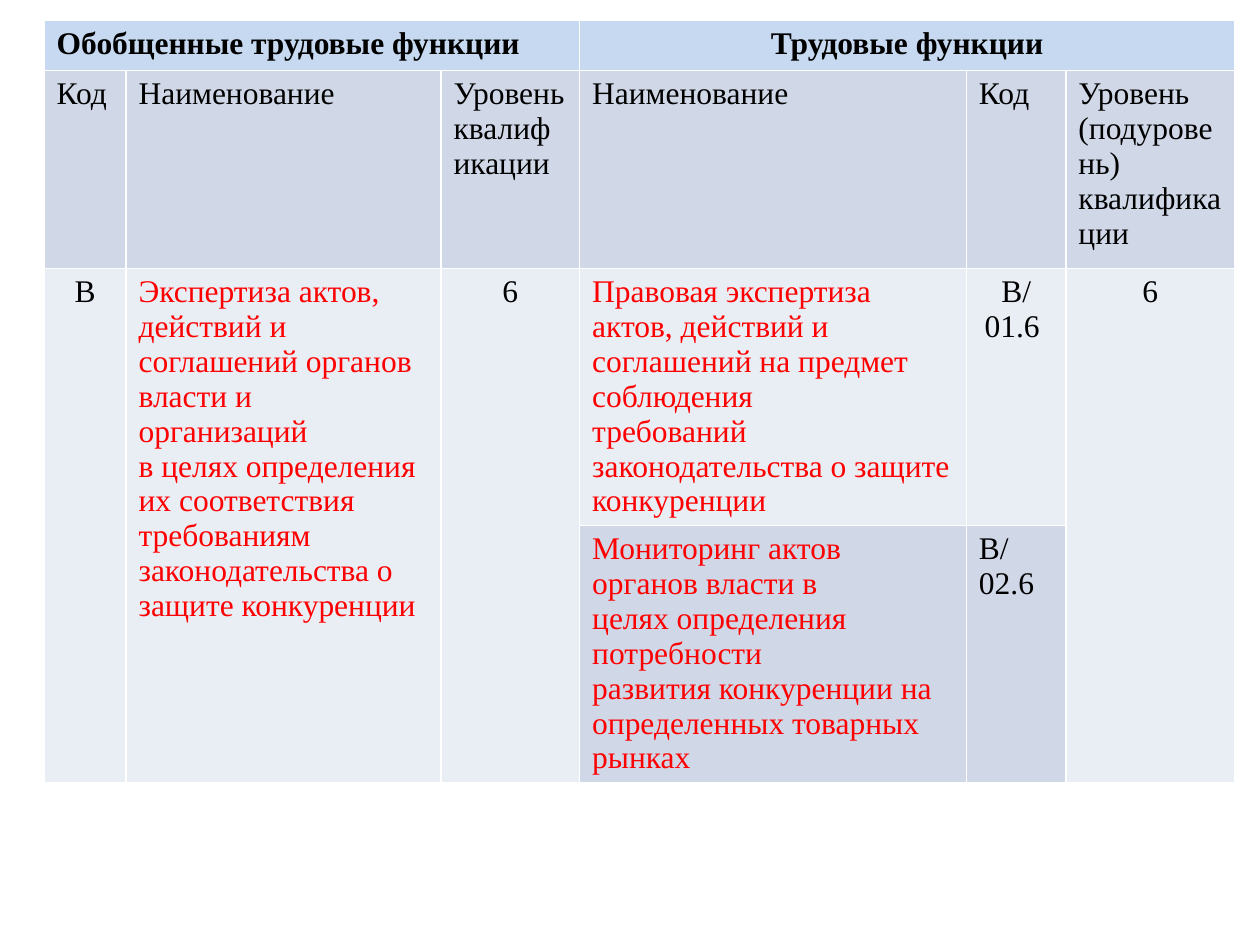
from pptx import Presentation
from pptx.dml.color import RGBColor
from pptx.enum.text import PP_ALIGN as Align
from pptx.util import Inches, Pt


def color(hex_string):
    return RGBColor.from_string(hex_string)


deck = Presentation()
deck.slide_width, deck.slide_height = Inches(10), Inches(7.5)
page = deck.slides.add_slide(deck.slide_layouts[6])

BLACK, RED = "000000", "FF0000"
HEADER, DARK, LIGHT = "C6D9F1", "D0D8E8", "E9EDF4"
LEFT, CENTER = Align.LEFT, Align.CENTER
column_widths = [0.65, 2.5, 1.1, 3.07, 0.79, 1.34]
row_heights = [0.4, 1.57, 2.04, 2.04]

# Table grid; the default style supplies the white borders
table = page.shapes.add_table(
    len(row_heights), len(column_widths), Inches(0.35), Inches(0.16),
    Inches(sum(column_widths)), Inches(sum(row_heights))).table
for column, width in zip(table.columns, column_widths):
    column.width = Inches(width)
for row, height in zip(table.rows, row_heights):
    row.height = Inches(height)

# Merged cells: two group headings, three tall body cells
for column in (0, 3):
    table.cell(0, column).merge(table.cell(0, column + 2))
for column in (0, 1, 2, 5):
    table.cell(2, column).merge(table.cell(3, column))

# Cell contents: row, column, text, fill, text colour, alignment
subheadings = ["Код", "Наименование", "Уровень квалификации",
               "Наименование", "Код", "Уровень (подуровень) квалификации"]
contents = [
    (0, 0, "Обобщенные трудовые функции", HEADER, BLACK, LEFT),
    (0, 3, "Трудовые функции", HEADER, BLACK, CENTER),
    *[(1, column, text, DARK, BLACK, LEFT)
      for column, text in enumerate(subheadings)],
    (2, 0, "В", LIGHT, BLACK, CENTER),
    (2, 1, "Экспертиза актов,\nдействий и\nсоглашений органов\n"
           "власти и организаций\nв целях определения\nих соответствия\n"
           "требованиям\nзаконодательства о\nзащите конкуренции",
     LIGHT, RED, LEFT),
    (2, 2, "6", LIGHT, BLACK, CENTER),
    (2, 3, "Правовая экспертиза актов, действий и\n"
           "соглашений на предмет соблюдения\n"
           "требований законодательства о защите\nконкуренции",
     LIGHT, RED, LEFT),
    (2, 4, "В/01.6 ", LIGHT, BLACK, CENTER),
    (2, 5, "6", LIGHT, BLACK, CENTER),
    (3, 3, "Мониторинг актов органов власти в\n"
           "целях определения потребности\nразвития конкуренции на\n"
           "определенных товарных рынках", DARK, RED, LEFT),
    (3, 4, "В/02.6", DARK, BLACK, LEFT),
]
for row, column, text, fill, text_color, alignment in contents:
    cell = table.cell(row, column)
    cell.fill.solid()
    cell.fill.fore_color.rgb = color(fill)
    cell.text_frame.text = text
    for para in cell.text_frame.paragraphs:
        para.alignment = alignment
        for span in para.runs:
            span.font.name = "Times New Roman"
            span.font.size = Pt(18)
            span.font.bold = row == 0
            span.font.color.rgb = color(text_color)

deck.save("out.pptx")
